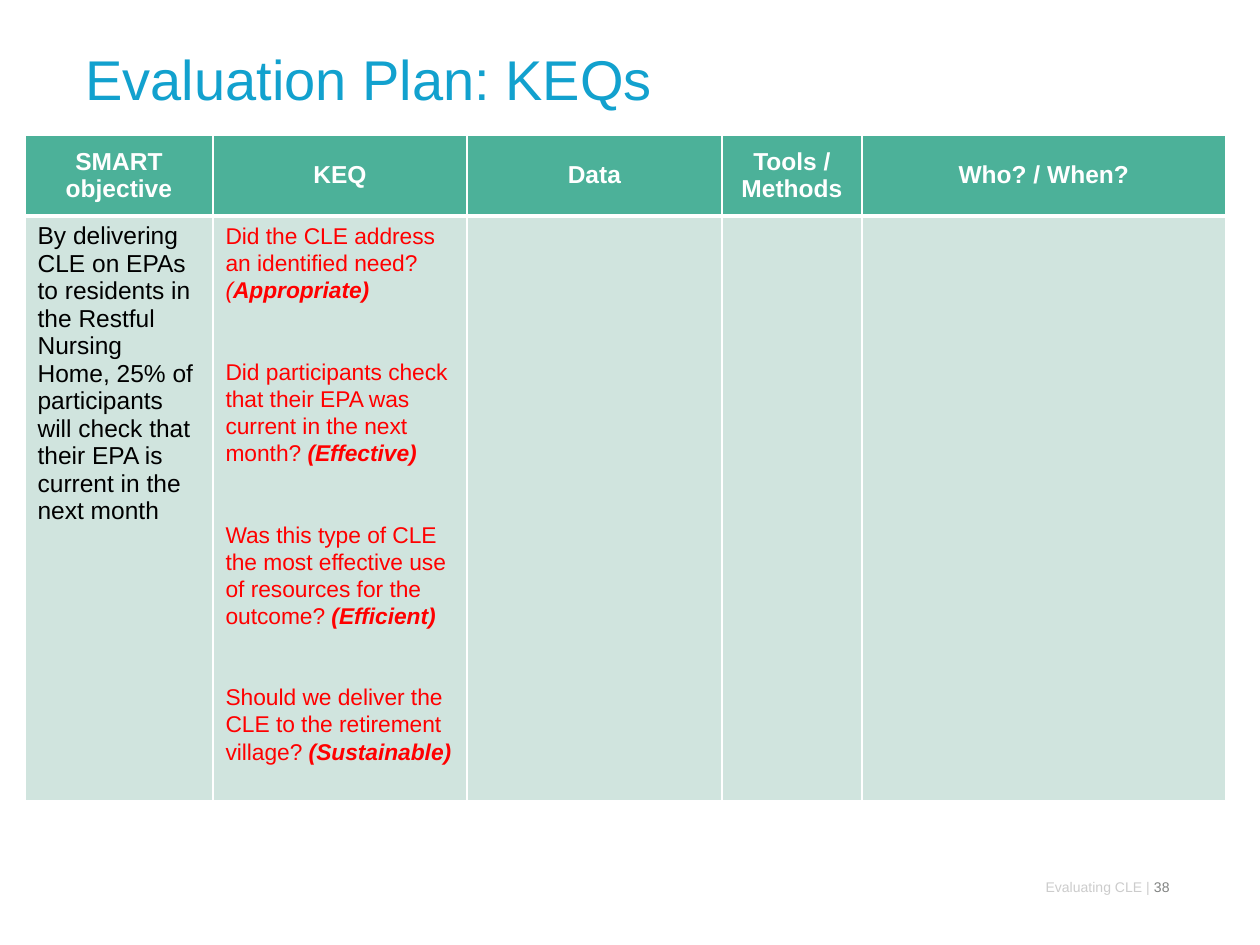
from lxml.etree import SubElement
from pptx import Presentation
from pptx.dml.color import RGBColor
from pptx.enum.text import MSO_ANCHOR, PP_ALIGN
from pptx.oxml.ns import qn
from pptx.util import Pt

PX = 914400 / 126
BLUE = RGBColor(0x12, 0xA1, 0xCE)
GREEN = RGBColor(0x4C, 0xB1, 0x99)
PALE = RGBColor(0xD0, 0xE4, 0xDE)
WHITE = RGBColor(0xFF, 0xFF, 0xFF)
BLACK = RGBColor(0, 0, 0)
RED = RGBColor(0xFF, 0, 0)
SILVER = RGBColor(0xCC, 0xCC, 0xCC)
GREY = RGBColor(0x81, 0x83, 0x82)


def px(*lengths):
    return [round(n * PX) for n in lengths]


def add_run(p, text, size, color, **font):
    r = p.add_run()
    r.text = text
    r.font.color.rgb = color
    for name, value in {"name": "Arial", "size": Pt(size), **font}.items():
        setattr(r.font, name, value)


prs = Presentation()
prs.slide_width, prs.slide_height = px(1260, 945)
s = prs.slides.add_slide(prs.slide_layouts[6])

# Title and footer
texts = [
    ((73, 30, 1071, 97), MSO_ANCHOR.MIDDLE, PP_ALIGN.LEFT,
     [("Evaluation Plan: KEQs", 32, BLUE)]),
    ((668, 872, 514, 31), MSO_ANCHOR.TOP, PP_ALIGN.RIGHT,
     [("Evaluating CLE | ", 8, SILVER), ("38", 8, GREY)]),
]
for box, anchor, align, runs in texts:
    tf = s.shapes.add_textbox(*px(*box)).text_frame
    tf.word_wrap = True
    tf.vertical_anchor = anchor
    p = tf.paragraphs[0]
    p.alignment = align
    for run in runs:
        add_run(p, *run)

# Evaluation table
headers = ["SMART objective", "KEQ", "Data", "Tools / Methods", "Who? / When?"]
widths = [188, 254, 255, 140, 364]
heights = [81, 585]
table = s.shapes.add_table(
    2, 5, *px(25, 135, sum(widths), sum(heights))).table
for column, width in zip(table.columns, px(*widths)):
    column.width = width
for row, height in zip(table.rows, px(*heights)):
    row.height = height

for i, row in enumerate(table.rows):
    for cell in row.cells:
        tcPr = cell._tc.get_or_add_tcPr()
        for side in ("L", "R", "T", "B"):
            heavy = (i, side) in ((0, "B"), (1, "T"))
            ln = SubElement(tcPr, qn(f"a:ln{side}"), w=str(Pt(3 if heavy else 1)))
            fill = SubElement(ln, qn("a:solidFill"))
            SubElement(fill, qn("a:srgbClr"), val=str(WHITE))
        cell.fill.solid()
        cell.fill.fore_color.rgb = PALE if i else GREEN

for cell, header in zip(table.rows[0].cells, headers):
    cell.vertical_anchor = MSO_ANCHOR.MIDDLE
    p = cell.text_frame.paragraphs[0]
    p.alignment = PP_ALIGN.CENTER
    add_run(p, header, 14, WHITE, bold=True)

add_run(table.cell(1, 0).text_frame.paragraphs[0],
        "By delivering CLE on EPAs to residents in the Restful Nursing Home, "
        "25% of participants will check that their EPA is current in the next month",
        14, BLACK, bold=False)

# Each paragraph: space before in points, then (text, bold, italic) runs
questions = [
    (0, [("Did the CLE address an identified need? ", False, False)]),
    (0, [("(", False, True), ("Appropriate)", True, True)]),
    (31, [("Did participants check that their EPA was current in the next month? ",
           False, False), ("(Effective)", True, True)]),
    (31, [("Was this type of CLE the most effective use of resources for the outcome? ",
           False, False), ("(Efficient)", True, True)]),
    (31, [("Should we deliver the CLE to the retirement village? ",
           False, False), ("(Sustainable)", True, True)]),
]
tf = table.cell(1, 1).text_frame
for i, (gap, runs) in enumerate(questions):
    p = tf.add_paragraph() if i else tf.paragraphs[0]
    p.line_spacing = 1.07
    p.space_before = Pt(gap)
    for text, bold, italic in runs:
        add_run(p, text, 13, RED, bold=bold, italic=italic)

prs.save("out.pptx")
